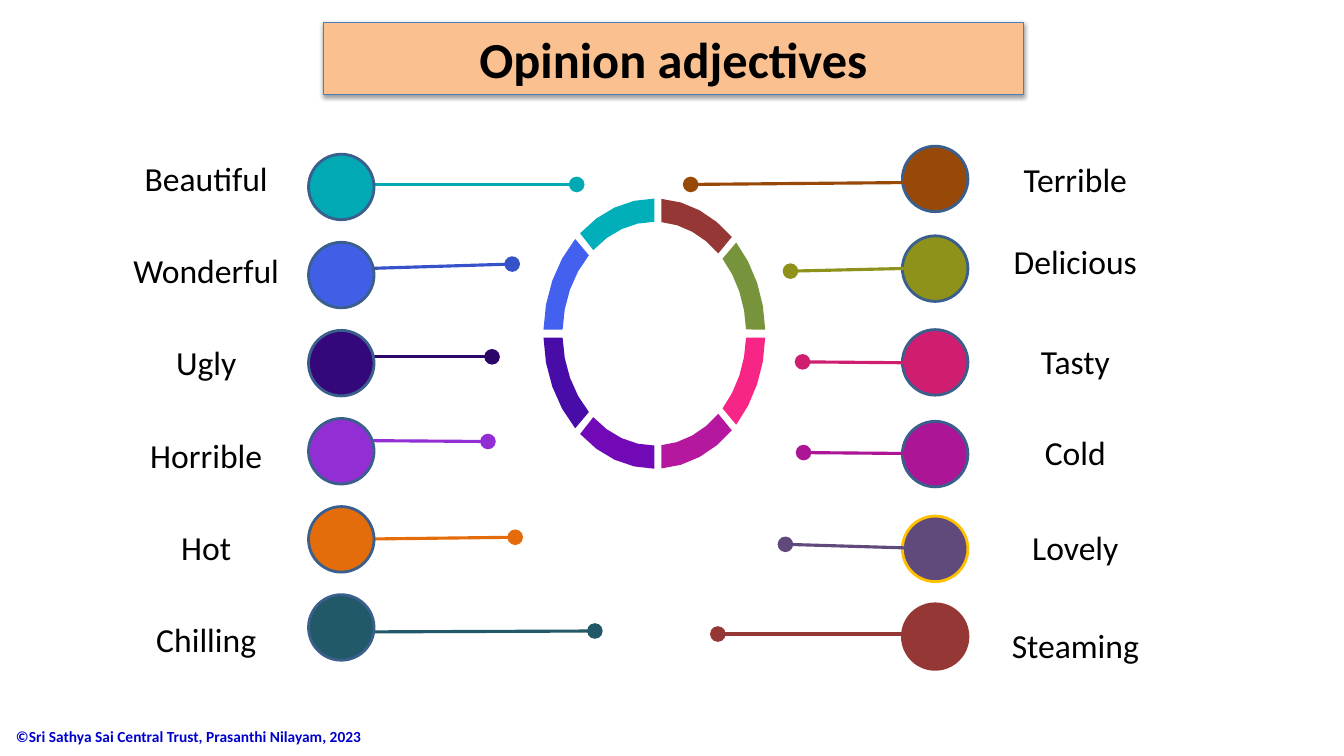
from math import cos, radians, sin

from lxml import etree
from pptx import Presentation
from pptx.dml.color import RGBColor
from pptx.enum.shapes import MSO_CONNECTOR as Connector, MSO_SHAPE as Shape
from pptx.enum.text import MSO_ANCHOR as Anchor, PP_ALIGN as Align
from pptx.oxml.ns import qn
from pptx.util import Inches, Pt

TITLE = "Opinion adjectives"
FOOTER = "©Sri Sathya Sai Central Trust, Prasanthi Nilayam, 2023"
COLORS = {
    "black": "000000", "footer": "0000CC", "peach": "FAC090", "title edge": "4B7EBC",
    "edge": "3A5F8C", "gold": "FFC000", "teal": "00A9B3", "blue": "415EE6",
    "deep blue": "3751C8", "indigo": "34077A", "deep indigo": "2D066A",
    "purple": "932ED4", "orange": "E46C0A", "petrol": "215968", "brown": "984807",
    "olive": "8E921A", "pink": "CF1E70", "magenta": "AC1596", "violet": "604A7B",
    "brick": "953735", "ring teal": "00AFB9", "ring blue": "4361EE",
    "ring green": "77933C", "ring indigo": "480CA8", "ring pink": "F72585",
    "ring magenta": "B5179E", "ring purple": "7209B7",
}

# word, disc colour, line colour, line start y, line end (x, y)
LEFT_WORDS = [
    ("Beautiful", "teal", "teal", 1.83, (5.72, 1.83)),
    ("Wonderful", "blue", "deep blue", 2.67, (5.08, 2.62)),
    ("Ugly", "indigo", "deep indigo", 3.54, (4.88, 3.54)),
    ("Horrible", "purple", "purple", 4.37, (4.84, 4.38)),
    ("Hot", "orange", "orange", 5.35, (5.11, 5.33)),
    ("Chilling", "petrol", "petrol", 6.27, (5.9, 6.26)),
]
# word, colour, disc edge, disc top, label top, line start y, line end (x, y)
RIGHT_WORDS = [
    ("Terrible", "brown", "edge", 1.45, 1.53, 1.81, (6.85, 1.83)),
    ("Delicious", "olive", "edge", 2.34, 2.34, 2.66, (7.84, 2.69)),
    ("Tasty", "pink", "edge", 3.27, 3.33, 3.6, (7.96, 3.59)),
    ("Cold", "magenta", "edge", 4.18, 4.24, 4.5, (7.97, 4.49)),
    ("Lovely", "violet", "gold", 5.12, 5.18, 5.44, (7.79, 5.4)),
    ("Steaming", "brick", "brick", 5.99, 6.15, 6.29, (7.12, 6.29)),
]
# colour, outer and inner (first, last) angles in degrees, clockwise from the right
RING = [
    ("ring teal", (228, 270), (228.3, 270)),
    ("brick", (273.7, 314.3), (274.4, 314.2)),
    ("ring blue", (181.7, 224.5), (182.1, 224.5)),
    ("ring green", (317.6, 358.3), (318, 357.9)),
    ("ring indigo", (135.5, 178.3), (135.5, 177.9)),
    ("ring pink", (1.7, 42.4), (2.1, 42)),
    ("ring magenta", (45.7, 86.3), (45.8, 85.6)),
    ("ring purple", (90, 132), (90, 131.7)),
]
RING_CENTER = (6.49, 3.31)
OUTER, INNER = (1.1, 1.34), (0.91, 1.11)
ARC_STEPS = 4

DISC = 0.65
LEFT_DISC_X, LEFT_DISC_TOP, LEFT_DISC_PITCH = 3.06, 1.53, 0.874
LEFT_LABEL_X, LEFT_LABEL_TOP, LEFT_LABEL_PITCH = 1.07, 1.515, 0.916
RIGHT_DISC_X, RIGHT_LABEL_X = 8.95, 9.69
LEFT_LINE_X, RIGHT_LINE_X = 3.45, 9.12
LABEL_SIZE = (1.95, 0.5)


def rgb(name):
    return RGBColor.from_string(COLORS[name])


def write(shape, text, size=24, color="black", bold=False, align=Align.CENTER,
          anchor=Anchor.TOP):
    frame = shape.text_frame
    frame.word_wrap = True
    frame.vertical_anchor = anchor
    paragraph = frame.paragraphs[0]
    paragraph.alignment = align
    run = paragraph.add_run()
    run.text = text
    run.font.name = "Calibri"
    run.font.size = Pt(size)
    run.font.bold = bold
    run.font.color.rgb = rgb(color)


def add_text(slide, left, top, width, height, text, **style):
    box = slide.shapes.add_textbox(*map(Inches, (left, top, width, height)))
    write(box, text, **style)


def paint(shape, fill, edge=None, width=2):
    shape.shadow.inherit = False
    shape.fill.solid()
    shape.fill.fore_color.rgb = rgb(fill)
    if edge:
        shape.line.color.rgb = rgb(edge)
        shape.line.width = Pt(width)
    else:
        shape.line.fill.background()


def add_disc(slide, left, top, fill, edge):
    disc = slide.shapes.add_shape(Shape.OVAL, *map(Inches, (left, top, DISC, DISC)))
    paint(disc, fill, edge)


def add_pointer(slide, start, end, color):
    """Line from a disc to a round dot."""
    line = slide.shapes.add_connector(Connector.STRAIGHT, *map(Inches, start + end))
    line.line.color.rgb = rgb(color)
    line.line.width = Pt(2.25)
    outline = line.line._get_or_add_ln()
    etree.SubElement(outline, qn("a:headEnd"), type="triangle")
    etree.SubElement(outline, qn("a:tailEnd"), type="oval", w="lg", len="lg")
    etree.SubElement(line._element.spPr, qn("a:effectLst"))


def arc(radii, first, last):
    """Points along an ellipse around the ring's centre, in EMU."""
    points = []
    for step in range(ARC_STEPS + 1):
        angle = radians(first + (last - first) * step / ARC_STEPS)
        points.append((Inches(RING_CENTER[0] + radii[0] * cos(angle)),
                       Inches(RING_CENTER[1] + radii[1] * sin(angle))))
    return points


def add_ring(slide):
    ring = slide.shapes.add_group_shape()
    for color, outer, inner in RING:
        points = arc(OUTER, *outer) + arc(INNER, *reversed(inner))
        builder = ring.shapes.build_freeform(*points[0])
        builder.add_line_segments(points[1:], close=True)
        paint(builder.convert_to_shape(), color)


def add_title(slide):
    title = slide.shapes.add_shape(Shape.RECTANGLE, *map(Inches, (3.21, 0.22, 6.94, 0.72)))
    paint(title, "peach", "title edge", 0.75)
    effects = title._element.spPr.find(qn("a:effectLst"))
    shadow = etree.SubElement(effects, qn("a:outerShdw"), blurRad=str(Pt(3.1)),
                              dist=str(Pt(1.6)), dir="5400000", rotWithShape="0")
    shade = etree.SubElement(shadow, qn("a:srgbClr"), val=COLORS["black"])
    etree.SubElement(shade, qn("a:alpha"), val="38000")
    write(title, TITLE, size=36, bold=True, anchor=Anchor.MIDDLE)


def main():
    presentation = Presentation()
    presentation.slide_width, presentation.slide_height = Inches(13.33), Inches(7.5)
    slide = presentation.slides.add_slide(presentation.slide_layouts[6])

    add_text(slide, 0.06, 7.1, 3.76, 0.41, FOOTER, size=11, color="footer", bold=True,
             align=Align.LEFT, anchor=Anchor.MIDDLE)
    add_ring(slide)
    for row, (word, color, line_color, start_y, end) in enumerate(LEFT_WORDS):
        add_pointer(slide, (LEFT_LINE_X, start_y), end, line_color)
        add_disc(slide, LEFT_DISC_X, LEFT_DISC_TOP + row * LEFT_DISC_PITCH, color, "edge")
        add_text(slide, LEFT_LABEL_X, LEFT_LABEL_TOP + row * LEFT_LABEL_PITCH,
                 *LABEL_SIZE, word)
    for word, color, edge, disc_top, label_top, start_y, end in RIGHT_WORDS:
        add_disc(slide, RIGHT_DISC_X, disc_top, color, edge)
        add_pointer(slide, (RIGHT_LINE_X, start_y), end, color)
        add_text(slide, RIGHT_LABEL_X, label_top, *LABEL_SIZE, word)
    add_title(slide)
    presentation.save("out.pptx")


if __name__ == "__main__":
    main()
